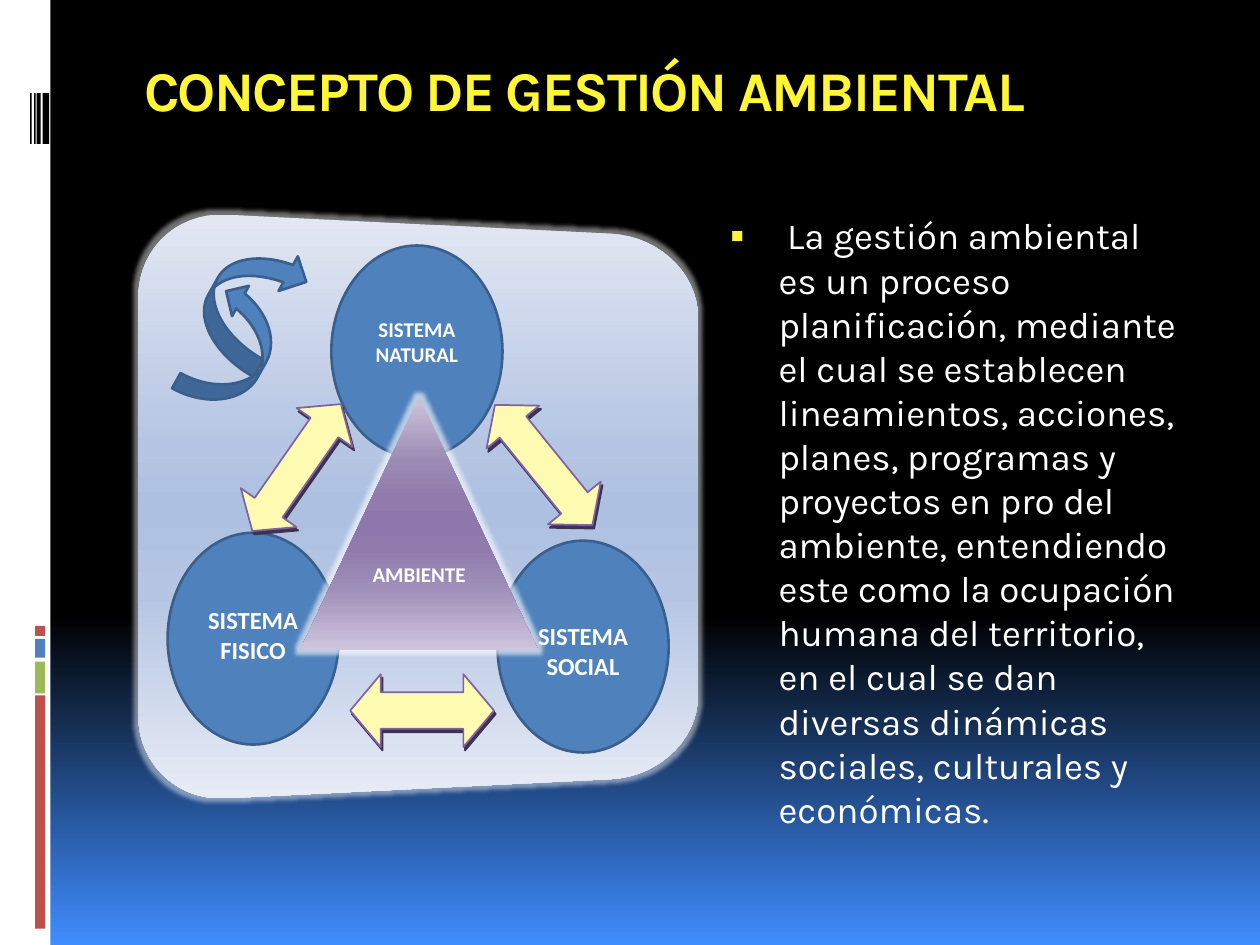
from dataclasses import dataclass
from math import cos, radians, sin

from lxml.etree import SubElement
from pptx import Presentation
from pptx.dml.color import RGBColor
from pptx.enum.shapes import MSO_SHAPE as Kind
from pptx.enum.text import MSO_ANCHOR, MSO_AUTO_SIZE, PP_ALIGN
from pptx.oxml.ns import qn
from pptx.util import Cm, Pt


@dataclass(frozen=True)
class Theme:
    """Colours, fonts and type sizes of the slide."""
    white: str = "FFFFFF"
    black: str = "000000"
    red: str = "C0504D"
    green: str = "9BBB59"
    blue: str = "4F81BD"
    navy: str = "3A5F8C"
    title: str = "FFF637"
    bullet: str = "FBF23B"
    cream: str = "FDFAB1"
    purple: str = "8064A2"
    shade: str = "3F3151"
    sky: tuple = ((0, "000000"), (65, "000000"), (100, "408DFF"))
    mist: tuple = ((0, "E2E7F2"), (40, "B5C5E3"), (50, "AEC0E1"),
                   (65, "B5C5E3"), (100, "E8ECF5"))
    plum: tuple = ((0, "CEC5DC"), (25, "9C8BB4"), (40, "907BAC"),
                   (50, "8E78AB"), (60, "907BAC"), (75, "9F8EB8"),
                   (100, "CEC5DD"))
    font: str = "Karla"
    label: str = "Calibri"
    head: int = 32
    text: int = 21
    large: int = 14
    small: int = 12


T = Theme()


def node(root, tag, **attrs):
    """Add an XML child with the given attributes."""
    return SubElement(root, qn(tag), {k: str(v) for k, v in attrs.items()})


def blend(fill, root, stops):
    """Give a fill a top-down gradient with the given stops."""
    fill.gradient()
    fill.gradient_angle = 270
    group = next(root.iter(qn("a:gsLst")))
    for old in list(group):
        group.remove(old)
    for spot, color in stops:
        stop = node(group, "a:gs", pos=spot * 1000)
        node(stop, "a:srgbClr", val=color)


def paint(shape, fill, line=None, width=1):
    """Set the fill and line of a shape and drop its shadow."""
    shape.shadow.inherit = False
    if isinstance(fill, str):
        shape.fill.solid()
        shape.fill.fore_color.rgb = RGBColor.from_string(fill)
    else:
        blend(shape.fill, shape.element, fill)
    if line:
        shape.line.color.rgb = RGBColor.from_string(line)
        shape.line.width = Pt(width)
    else:
        shape.line.fill.background()


def draw(shapes, kind, box, fill, line=None, width=1, turn=0):
    """Add a painted preset shape, with box given in centimetres."""
    shape = shapes.add_shape(kind, *map(Cm, box))
    shape.rotation = turn
    paint(shape, fill, line, width)
    return shape


def effect(shape, tag, color, alpha=100, **attrs):
    """Add a glow or a shadow to a shape."""
    root = node(next(shape.element.iter(qn("a:effectLst"))), tag, **attrs)
    node(node(root, "a:srgbClr", val=color), "a:alpha", val=alpha * 1000)


def style(par, font, size, color, bold=False):
    """Set the font of a paragraph."""
    par.font.name = font
    par.font.size = Pt(size)
    par.font.bold = bold
    par.font.color.rgb = RGBColor.from_string(color)


def label(shape, text, size, shift, wrap=True):
    """Write a centred label, moved down by shift centimetres."""
    frame = shape.text_frame
    frame.word_wrap = wrap
    frame.vertical_anchor = MSO_ANCHOR.MIDDLE
    frame.margin_left = frame.margin_right = Cm(0.1)
    frame.margin_top = Cm(max(0, 2 * shift))
    frame.margin_bottom = Cm(max(0, -2 * shift))
    par = frame.paragraphs[0]
    par.text = text
    par.alignment = PP_ALIGN.CENTER
    style(par, T.label, size, T.white, True)


def write(holder, box, text):
    """Place a placeholder, fill it and return its paragraph."""
    holder.left, holder.top, holder.width, holder.height = map(Cm, box)
    frame = holder.text_frame
    frame.text = text
    frame.word_wrap = True
    frame.auto_size = MSO_AUTO_SIZE.NONE
    frame.vertical_anchor = MSO_ANCHOR.TOP
    return frame.paragraphs[0]


def title(holder):
    """Write the slide title."""
    par = write(holder, (0.99, 0.99, 21.59, 1.4),
                "CONCEPTO DE GESTIÓN AMBIENTAL")
    par.alignment = PP_ALIGN.CENTER
    style(par, T.font, T.head, T.title, True)
    par.runs[0].font._element.set("spc", "-100")


def body(holder):
    """Write the bulleted definition."""
    par = write(holder, (14.3, 4.17, 9.88, 13.28),
                " La gestión ambiental es un proceso planificación, mediante "
                "el cual se establecen lineamientos, acciones, planes, "
                "programas y proyectos en pro del ambiente, entendiendo este "
                "como la ocupación humana del territorio, en el cual se dan "
                "diversas dinámicas sociales, culturales y económicas.")
    par.space_before = Pt(7)
    props = par._p.get_or_add_pPr()
    props.set("marL", str(Cm(1.14)))
    props.set("indent", str(Cm(-0.97)))
    node(node(props, "a:buClr"), "a:srgbClr", val=T.bullet)
    node(props, "a:buSzPct", val=95000)
    node(props, "a:buFont", typeface=T.font)
    node(props, "a:buChar", char="▪")
    style(par, T.font, T.text, T.white)


def side(shapes):
    """Draw the white edge with its colour bars and stripes."""
    draw(shapes, Kind.RECTANGLE, (0, 0, 1.02, 19.05), T.white)
    for top, high, color in ((14.02, 4.7, T.red), (13.34, 0.64, T.green),
                             (12.88, 0.38, T.blue), (12.62, 0.2, T.red)):
        draw(shapes, Kind.RECTANGLE, (0.71, top, 0.2, high), color)
    for left, wide in ((0.86, 0.13), (0.74, 0.08), (0.69, 0.03), (0.61, 0.03)):
        draw(shapes, Kind.RECTANGLE, (left, 1.88, wide, 1.02), T.black)


def panel(shapes):
    """Draw the rounded panel that narrows to the right."""
    left, right, mid, tall, short, bend = 2.79, 14.07, 10.21, 5.97, 5.41, 1.75
    dots = []
    for start, x, way in ((0, right - bend, 1), (90, left + bend, 1),
                          (180, left + bend, -1), (270, right - bend, -1)):
        for angle in range(start, start + 91, 6):
            across = x + bend * cos(radians(angle))
            up = way * (tall - bend) + bend * sin(radians(angle))
            ratio = (across - left) / (right - left)
            scale = 1 - ratio * (1 - short / tall)
            dots.append((Cm(across), Cm(mid + up * scale)))
    outline = shapes.build_freeform(*dots[0])
    outline.add_line_segments(dots[1:])
    shape = outline.convert_to_shape()
    paint(shape, T.mist)
    effect(shape, "a:glow", T.white, 45, rad=Pt(5))


def scheme(shapes):
    """Draw the three systems around the environment."""
    panel(shapes)
    for left, top, text, size, shift in (
            (6.68, 4.95, "SISTEMA NATURAL", T.small, -0.2),
            (10.03, 10.9, "SISTEMA SOCIAL", T.large, 0.08),
            (3.38, 10.74, "SISTEMA FISICO", T.large, -0.08)):
        oval = draw(shapes, Kind.OVAL, (left, top, 3.45, 4.27),
                    T.blue, T.navy, 1.5)
        label(oval, text, size, shift)
    core = draw(shapes, Kind.ISOSCELES_TRIANGLE, (6.05, 8, 4.8, 5.11), T.plum)
    effect(core, "a:glow", T.white, 60, rad=Pt(5))
    label(core, "AMBIENTE", T.small, -0.26, False)
    for box, turn in (((7.06, 13.59, 2.9, 1.47), 0),
                      ((9.4, 8.69, 3.12, 1.37), 51),
                      ((4.42, 8.74, 3.12, 1.37), 304.9)):
        arrow = draw(shapes, Kind.LEFT_RIGHT_ARROW, box,
                     T.cream, T.purple, 1, turn)
        arrow.adjustments[1] = 0.42
        effect(arrow, "a:outerShdw", T.shade, dist=Pt(2.2), dir=63 * 60000,
               algn="ctr", rotWithShape=0)
    for kind, box in ((Kind.CURVED_LEFT_ARROW, (4.24, 4.78, 1.6, 2.59)),
                      (Kind.CURVED_RIGHT_ARROW, (4.01, 5.74, 1.4, 2.59))):
        draw(shapes, kind, box, T.blue, T.navy, 1.5, 209.1)


def main():
    """Build and save the slide."""
    deck = Presentation()
    deck.slide_width, deck.slide_height = Cm(25.4), Cm(19.05)
    slide = deck.slides.add_slide(deck.slide_layouts[1])
    blend(slide.background.fill, slide.element, T.sky)
    side(slide.shapes)
    title(slide.shapes.title)
    body(slide.placeholders[1])
    scheme(slide.shapes.add_group_shape().shapes)
    deck.save("out.pptx")


if __name__ == "__main__":
    main()
